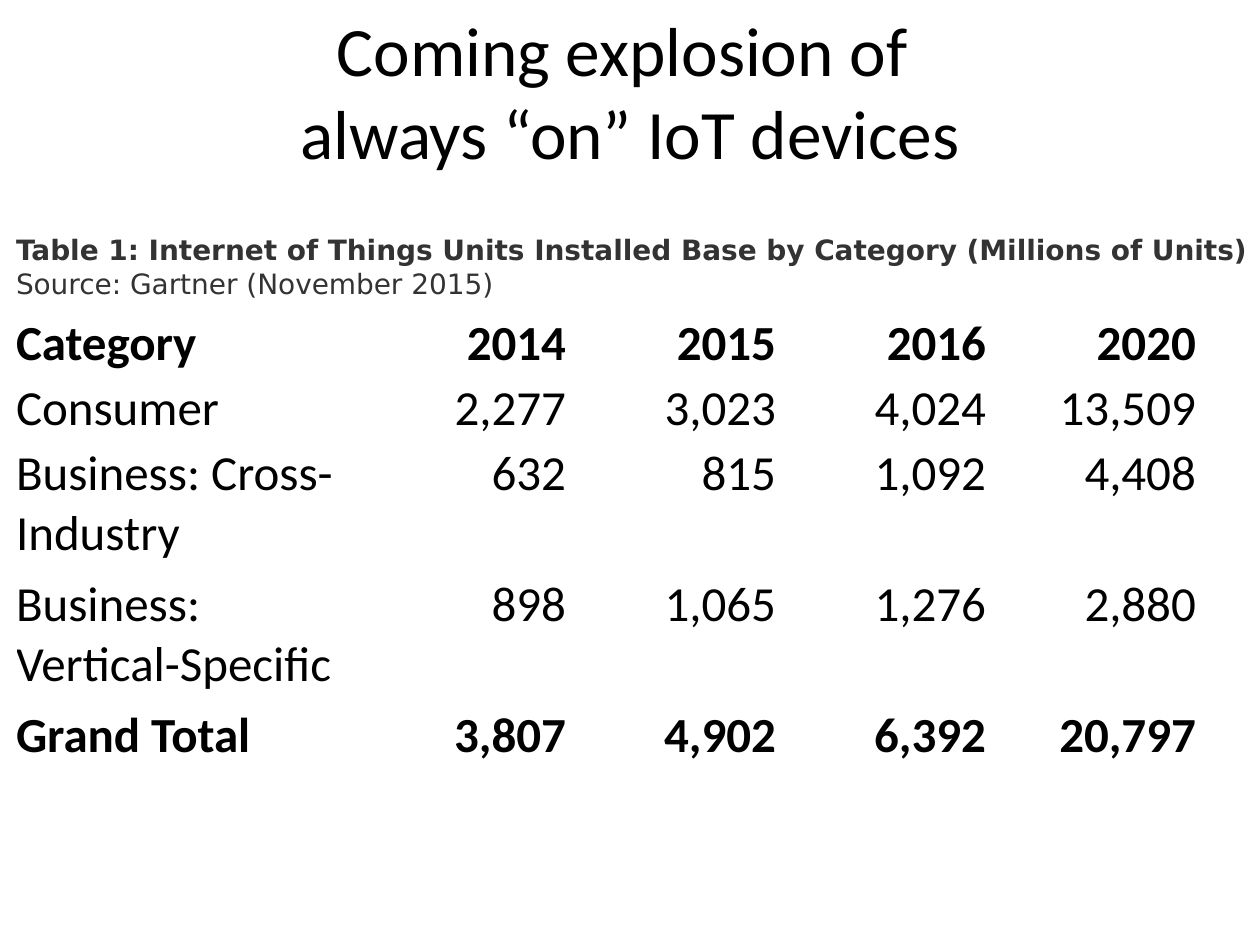
"""Build a slide with a table of installed IoT units by category."""
import dataclasses

import pptx
import pptx.dml.color
import pptx.enum.text
import pptx.util

WHITE = pptx.dml.color.RGBColor(0xFF, 0xFF, 0xFF)
BLACK = pptx.dml.color.RGBColor(0x00, 0x00, 0x00)
GREY = pptx.dml.color.RGBColor(0x33, 0x33, 0x33)
ALIGN = pptx.enum.text.PP_ALIGN
MIDDLE = pptx.enum.text.MSO_ANCHOR.MIDDLE
SCALE = 914400 / 126


@dataclasses.dataclass(frozen=True)
class Style:
    font: str
    size: float
    color: pptx.dml.color.RGBColor


@dataclasses.dataclass(frozen=True)
class Row:
    height: int
    cells: tuple[str, ...]
    bold: bool = False


TITLE = Style("Calibri", 39.6, BLACK)
BODY = Style("Calibri", 28, BLACK)
NOTE = Style("DejaVu Sans", 16, GREY)

WIDTHS = (340, 210, 210, 210, 210)
ROWS = (
    Row(65, ("Category", "2014", "2015", "2016", "2020"), True),
    Row(65, ("Consumer", "2,277", "3,023", "4,024", "13,509")),
    Row(131, ("Business: Cross-Industry", "632", "815", "1,092", "4,408")),
    Row(131, ("Business: Vertical-Specific", "898", "1,065", "1,276", "2,880")),
    Row(65, ("Grand Total", "3,807", "4,902", "6,392", "20,797"), True),
)


def px(count: int) -> pptx.util.Emu:
    return pptx.util.Emu(round(count * SCALE))


def write(para, text: str, style: Style, align=ALIGN.LEFT, bold: bool = False) -> None:
    para.text = text
    para.alignment = align
    para.font.name = style.font
    para.font.size = pptx.util.Pt(style.size)
    para.font.color.rgb = style.color
    para.font.bold = bold


def clear(item) -> None:
    item.margin_left = item.margin_right = item.margin_top = item.margin_bottom = 0


def add_box(slide, left: int, top: int, width: int, height: int):
    box = slide.shapes.add_textbox(px(left), px(top), px(width), px(height))
    frame = box.text_frame
    frame.word_wrap = True
    frame.vertical_anchor = MIDDLE
    clear(frame)
    return box


def add_grid(slide, left: int, top: int) -> None:
    high = sum(row.height for row in ROWS)
    grid = slide.shapes.add_table(
        len(ROWS), len(WIDTHS), px(left), px(top), px(sum(WIDTHS)), px(high)
    ).table
    grid.first_row = grid.horz_banding = False
    for col, width in zip(grid.columns, WIDTHS):
        col.width = px(width)
    for line, row in zip(grid.rows, ROWS):
        line.height = px(row.height)
        for i, (cell, text) in enumerate(zip(line.cells, row.cells)):
            clear(cell)
            cell.fill.solid()
            cell.fill.fore_color.rgb = WHITE
            align = ALIGN.RIGHT if i else ALIGN.LEFT
            write(cell.text_frame.paragraphs[0], text, BODY, align, row.bold)


def main() -> None:
    deck = pptx.Presentation()
    deck.slide_width, deck.slide_height = px(1260), px(945)
    slide = deck.slides.add_slide(deck.slide_layouts[6])

    title = add_box(slide, 0, 11, 1260, 158).text_frame
    text = "Coming explosion of \valways “on” IoT devices"
    write(title.paragraphs[0], text, TITLE, ALIGN.CENTER)

    add_grid(slide, 16, 314)

    note = add_box(slide, 16, 232, 1254, 68)
    note.fill.solid()
    note.fill.fore_color.rgb = WHITE
    frame = note.text_frame
    head = "Table 1: Internet of Things Units Installed Base by Category (Millions of Units)"
    write(frame.paragraphs[0], head, NOTE, bold=True)
    write(frame.add_paragraph(), "Source: Gartner (November 2015)", NOTE)

    deck.save("out.pptx")


if __name__ == "__main__":
    main()
